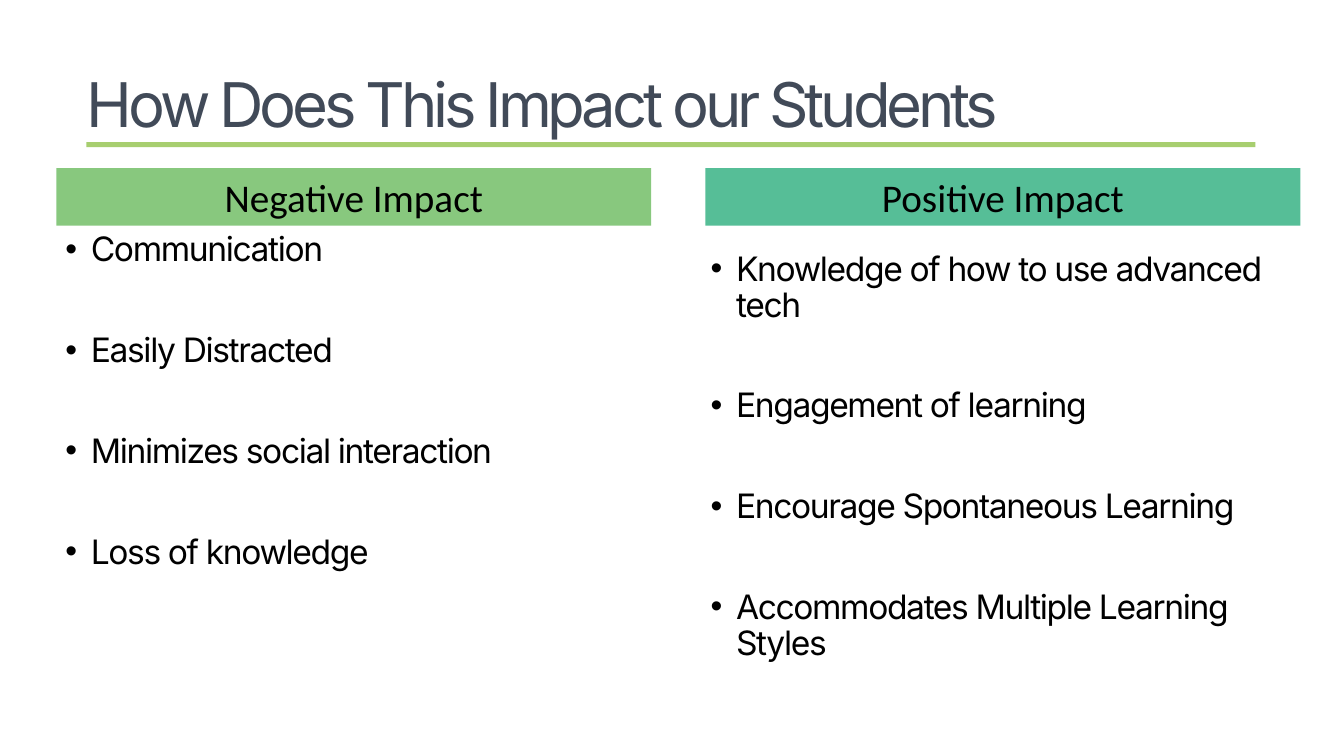
from dataclasses import dataclass

from lxml import etree
from pptx import Presentation
from pptx import util as u
from pptx.dml.color import RGBColor
from pptx.enum import shapes, text
from pptx.oxml.ns import qn


@dataclass(frozen=True)
class Face:
    font: str
    size: int
    color: str
    track: int = 0  # letter spacing, hundredths of a point
    lead: float = 1.0


@dataclass(frozen=True)
class Theme:
    rule: str = "A7CE6F"
    title: Face = Face("Inter", 44, "414A58", -300, 0.9)
    head: Face = Face("Calibri", 28, "000000")
    body: Face = Face("Inter", 24, "000000", -100, 0.9)
    inset: float = 0.13
    hang: float = 0.64
    gap: int = 46


@dataclass(frozen=True)
class Box:
    left: float
    top: float
    width: float
    height: float

    def args(self) -> list:
        return [u.Cm(n) for n in (self.left, self.top, self.width, self.height)]


@dataclass(frozen=True)
class Column:
    head: str
    fill: str
    bar: Box
    area: Box
    items: tuple


THEME = Theme()
WIDE = 14.99
COLUMNS = (
    Column("Negative Impact", "88C87E",
           Box(1.42, 4.24, WIDE, 1.45), Box(1.52, 5.74, WIDE, 13.89),
           ("Communication", "Easily Distracted",
            "Minimizes social interaction", "Loss of knowledge")),
    Column("Positive Impact", "56BE97",
           Box(17.78, 4.24, WIDE, 1.45), Box(17.78, 6.22, WIDE, 13.89),
           ("Knowledge of how to use advanced tech", "Engagement of learning",
            "Encourage Spontaneous Learning",
            "Accommodates Multiple Learning Styles")),
)


def add_bar(slide, box: Box, fill: str):
    bar = slide.shapes.add_shape(shapes.MSO_SHAPE.RECTANGLE, *box.args())
    bar.shadow.inherit = False
    bar.fill.solid()
    bar.fill.fore_color.rgb = RGBColor.from_string(fill)
    bar.line.fill.background()
    return bar


def set_bullet(para) -> None:
    props = para._p.get_or_add_pPr()
    hang = u.Cm(THEME.hang)
    props.set("marL", str(hang))
    props.set("indent", str(-hang))
    etree.SubElement(props, qn("a:buFont")).set("typeface", "Arial")
    etree.SubElement(props, qn("a:buChar")).set("char", "•")


def write(shape, lines: tuple, face: Face, align=text.PP_ALIGN.LEFT,
          anchor=text.MSO_ANCHOR.TOP, bullet: bool = False) -> None:
    frame = shape.text_frame
    frame.word_wrap = True
    frame.vertical_anchor = anchor
    frame.margin_left = frame.margin_right = u.Cm(THEME.inset)
    frame.margin_top = frame.margin_bottom = u.Cm(THEME.inset)
    for n, line in enumerate(lines):
        para = frame.add_paragraph() if n else frame.paragraphs[0]
        if bullet:
            set_bullet(para)
        para.alignment = align
        para.line_spacing = face.lead
        if n:
            para.space_before = u.Pt(THEME.gap)
        run = para.add_run()
        run.text = line
        run.font.name = face.font
        run.font.size = u.Pt(face.size)
        run.font.color.rgb = RGBColor.from_string(face.color)
        if face.track:
            run._r.get_or_add_rPr().set("spc", str(face.track))


def add_column(slide, col: Column) -> None:
    bar = add_bar(slide, col.bar, col.fill)
    write(bar, (col.head,), THEME.head, text.PP_ALIGN.CENTER,
          text.MSO_ANCHOR.MIDDLE)
    area = slide.shapes.add_textbox(*col.area.args())
    write(area, col.items, THEME.body, bullet=True)


def main() -> None:
    deck = Presentation()
    deck.slide_width, deck.slide_height = u.Cm(33.87), u.Cm(19.05)
    slide = deck.slides.add_slide(deck.slide_layouts[6])

    # Title and the rule below it
    add_bar(slide, Box(2.18, 3.58, 29.46, 0.13), THEME.rule)
    title = slide.shapes.add_textbox(*Box(2.06, 1.75, 28.96, 1.96).args())
    write(title, ("How Does This Impact our Students",), THEME.title)

    # Two columns of impacts
    for col in COLUMNS:
        add_column(slide, col)

    deck.save("out.pptx")


if __name__ == "__main__":
    main()
